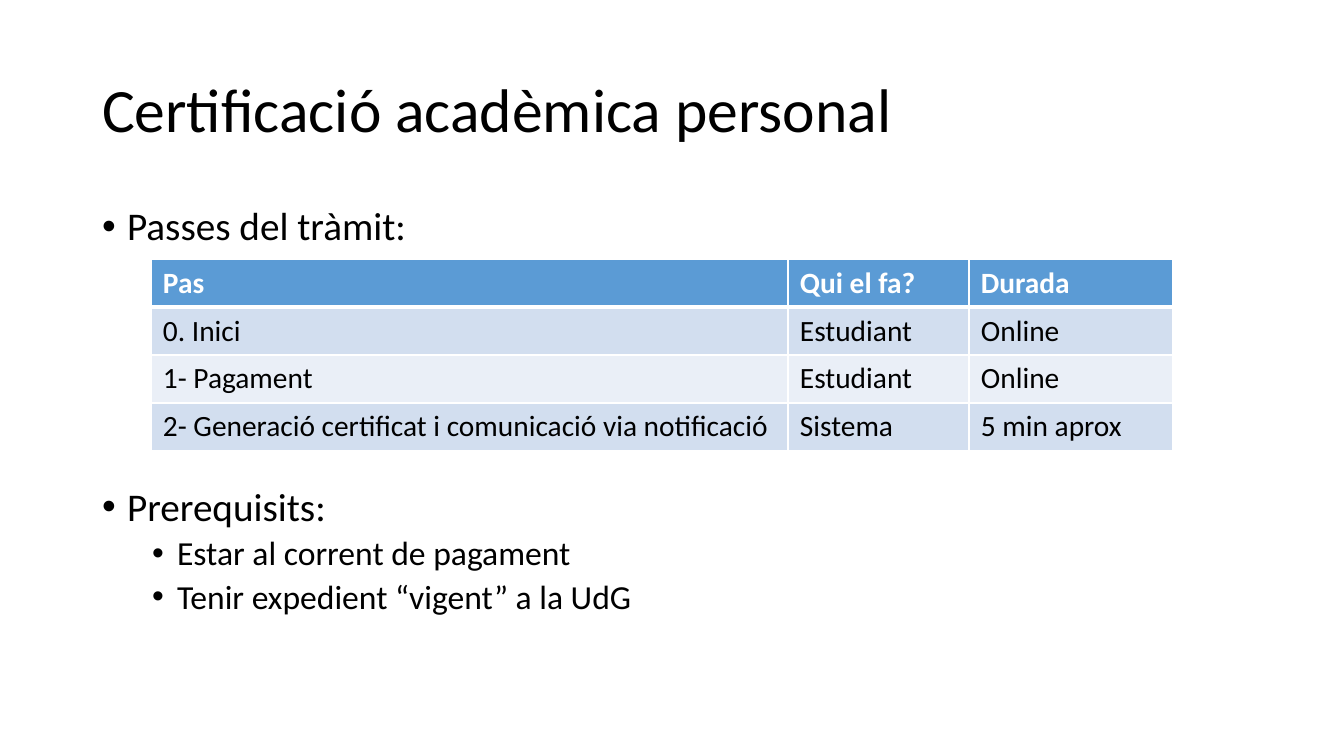
import pptx
import pptx.util
import pptx.dml.color
import pptx.enum.text
import pptx.oxml.ns
from lxml import etree

TITLE = "Certificació acadèmica personal"
# (text, level, space before in points); the wide space leaves room for the table
BULLETS = [
    ("Passes del tràmit:", 0, 10),
    ("Prerequisits:", 0, 170),
    ("Estar al corrent de pagament", 1, 5),
    ("Tenir expedient “vigent” a la UdG", 1, 5),
]
STEPS = [
    ("Pas", "Qui el fa?", "Durada"),
    ("0. Inici", "Estudiant", "Online"),
    ("1- Pagament", "Estudiant", "Online"),
    ("2- Generació certificat i comunicació via notificació", "Sistema", "5 min aprox"),
]

# Lengths in px
SLIDE = (1344, 756)
TITLE_BOX = (92, 40, 1159, 146)
BODY_BOX = (92, 202, 1159, 480)
TABLE_AT = (151, 259)
COLUMNS = (637, 181, 204)
ROW = 47
INDENT, LEVEL_STEP = 25, 50
CELL_MARGINS = {"margin_left": 12, "margin_right": 12, "margin_top": 6, "margin_bottom": 6}

THEME = {
    "font": "Calibri", "text": "000000", "white": "FFFFFF",
    "header": "5B9BD5", "bands": ("D2DEEF", "EAEFF7"),
    "title": 44, "levels": (28, 24), "cell": 21,
}


def px(n):
    return pptx.util.Emu(round(n * 914400 / 100.8))


def rgb(color):
    return pptx.dml.color.RGBColor.from_string(color)


def place(sp, box):
    for name, n in zip(("left", "top", "width", "height"), box):
        setattr(sp, name, px(n))


def write(p, text, size, color=THEME["text"], bold=False):
    r = p.add_run()
    r.text = text
    look = {"name": THEME["font"], "size": pptx.util.Pt(size), "bold": bold}
    for name, value in look.items():
        setattr(r.font, name, value)
    r.font.color.rgb = rgb(color)


def sub(parent, tag, **attrs):
    return etree.SubElement(parent, pptx.oxml.ns.qn(tag), **attrs)


def add_bullet(p, level):
    pPr = p._p.get_or_add_pPr()
    pPr.set("marL", str(px(INDENT + LEVEL_STEP * level)))
    pPr.set("indent", str(-px(INDENT)))
    sub(pPr, "a:buFont", typeface="Arial")
    sub(pPr, "a:buChar", char="•")


def add_borders(cell, widths):
    tcPr = cell._tc.get_or_add_tcPr()
    for side, width in widths.items():
        ln = sub(tcPr, f"a:ln{side}", w=str(pptx.util.Pt(width)))
        sub(sub(ln, "a:solidFill"), "a:srgbClr", val=THEME["white"])


def fill_title(sp):
    place(sp, TITLE_BOX)
    tf = sp.text_frame
    tf.vertical_anchor = pptx.enum.text.MSO_ANCHOR.MIDDLE
    tf.auto_size = pptx.enum.text.MSO_AUTO_SIZE.NONE
    p = tf.paragraphs[0]
    p.alignment = pptx.enum.text.PP_ALIGN.LEFT
    p.line_spacing = 0.9
    write(p, TITLE, THEME["title"])


def fill_body(sp):
    place(sp, BODY_BOX)
    tf = sp.text_frame
    tf.vertical_anchor = pptx.enum.text.MSO_ANCHOR.TOP
    tf.auto_size = pptx.enum.text.MSO_AUTO_SIZE.NONE
    for i, (text, level, before) in enumerate(BULLETS):
        p = tf.add_paragraph() if i else tf.paragraphs[0]
        layout = {"level": level, "line_spacing": 0.9, "space_before": pptx.util.Pt(before)}
        for name, value in layout.items():
            setattr(p, name, value)
        add_bullet(p, level)
        write(p, text, THEME["levels"][level])


def add_steps(s):
    size = (sum(COLUMNS), ROW * len(STEPS))
    frame = s.shapes.add_table(len(STEPS), len(COLUMNS), *map(px, TABLE_AT + size))
    table = frame.table
    for column, width in zip(table.columns, COLUMNS):
        column.width = px(width)
    for i, row in enumerate(STEPS):
        table.rows[i].height = px(ROW)
        header = i == 0
        for j, text in enumerate(row):
            cell = table.cell(i, j)
            for name, n in CELL_MARGINS.items():
                setattr(cell, name, px(n))
            add_borders(cell, {"L": 1, "R": 1, "T": 3 if i == 1 else 1, "B": 3 if header else 1})
            cell.fill.solid()
            cell.fill.fore_color.rgb = rgb(THEME["header"] if header else THEME["bands"][(i - 1) % 2])
            write(cell.text_frame.paragraphs[0], text, THEME["cell"],
                  THEME["white"] if header else THEME["text"], header)


def main():
    prs = pptx.Presentation()
    prs.slide_width, prs.slide_height = map(px, SLIDE)
    s = prs.slides.add_slide(prs.slide_layouts[1])
    fill_title(s.shapes.title)
    fill_body(s.placeholders[1])
    add_steps(s)
    prs.save("out.pptx")


if __name__ == "__main__":
    main()
